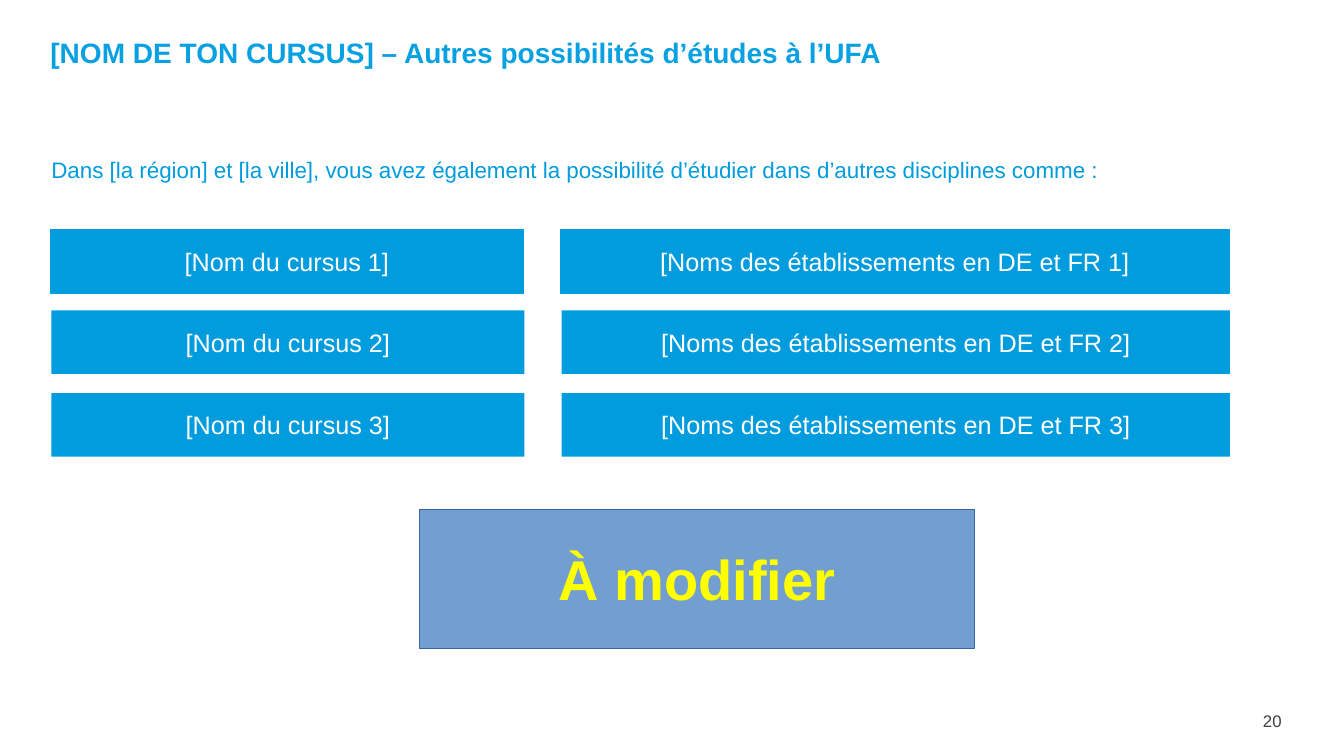
from pptx import Presentation
from pptx.dml.color import RGBColor
from pptx.enum.shapes import MSO_SHAPE
from pptx.enum.text import MSO_ANCHOR, PP_ALIGN
from pptx.util import Inches, Pt

TITLE = "[NOM DE TON CURSUS] – Autres possibilités d’études à l’UFA"
INTRO = ("Dans [la région] et [la ville], vous avez également la possibilité "
         "d’étudier dans d’autres disciplines comme :")
COURSES = [
    ("[Nom du cursus 1]", "[Noms des établissements en DE et FR 1]"),
    ("[Nom du cursus 2]", "[Noms des établissements en DE et FR 2]"),
    ("[Nom du cursus 3]", "[Noms des établissements en DE et FR 3]"),
]
NOTICE = "À modifier"
PAGE_NUMBER = "20"

BLUE = "009CDD"
COLUMNS = [(0.51, 4.69), (5.57, 6.63)]
ROW_TOPS = [2.28, 3.08, 3.9]
ROW_HEIGHT = 0.63
OUTLINE_SHIFT = 0.01


def color(value):
    return RGBColor.from_string(value)


def write(shape, text, size, ink, bold=False, align=PP_ALIGN.LEFT,
          anchor=MSO_ANCHOR.TOP, side=0.1, spacing=1.0):
    frame = shape.text_frame
    frame.word_wrap = True
    frame.vertical_anchor = anchor
    frame.margin_left = frame.margin_right = Inches(side)
    frame.margin_top = frame.margin_bottom = Inches(0.05)
    paragraph = frame.paragraphs[0]
    paragraph.alignment = align
    paragraph.line_spacing = spacing
    run = paragraph.add_run()
    run.text = text
    run.font.name = "Arial"
    run.font.size = Pt(size)
    run.font.bold = bold
    run.font.color.rgb = color(ink)


def add_label(slide, box, text, size, ink, **style):
    label = slide.shapes.add_textbox(*map(Inches, box))
    write(label, text, size, ink, **style)


def add_panel(slide, box, text, size, ink, fill, outline=None, width=0, bold=False):
    panel = slide.shapes.add_shape(MSO_SHAPE.RECTANGLE, *map(Inches, box))
    panel.shadow.inherit = False
    panel.fill.solid()
    panel.fill.fore_color.rgb = color(fill)
    if outline:
        panel.line.color.rgb = color(outline)
        panel.line.width = Pt(width)
    else:
        panel.line.fill.background()
    write(panel, text, size, ink, bold, PP_ALIGN.CENTER, MSO_ANCHOR.MIDDLE)


def main():
    deck = Presentation()
    deck.slide_width, deck.slide_height = Inches(13.33), Inches(7.5)
    slide = deck.slides.add_slide(deck.slide_layouts[6])

    add_label(slide, (9.81, 6.95, 3, 0.4), PAGE_NUMBER, 12, "404040",
              align=PP_ALIGN.RIGHT, anchor=MSO_ANCHOR.MIDDLE)
    add_label(slide, (0.51, 1.55, 12.33, 0.32), INTRO, 16, BLUE, side=0, spacing=0.8)

    for row, (course, top) in enumerate(zip(COURSES, ROW_TOPS)):
        outlined = row == 0
        shift = OUTLINE_SHIFT if outlined else 0
        for text, (left, width) in zip(course, COLUMNS):
            add_panel(slide, (left - shift, top, width, ROW_HEIGHT), text, 18,
                      "FFFFFF", BLUE, BLUE if outlined else None, 1)

    add_panel(slide, (4.16, 5.05, 5.51, 1.38), NOTICE, 40, "FFFF00",
              "729FCF", "3465A4", 0, bold=True)
    add_label(slide, (0.5, 0.37, 9.5, 0.37), TITLE, 20, "07A0E1",
              bold=True, side=0, spacing=0.8)

    deck.save("out.pptx")


if __name__ == "__main__":
    main()
